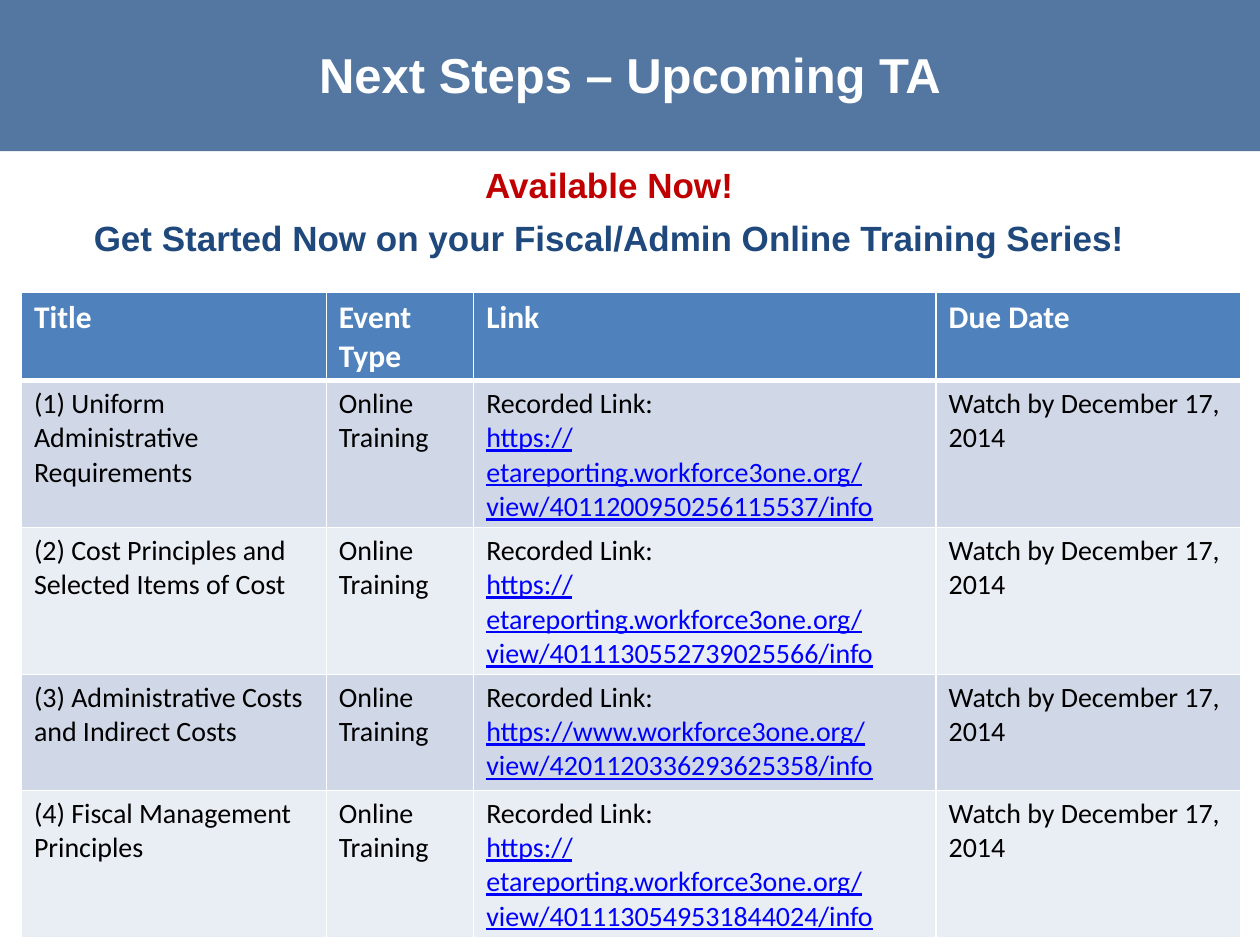
from dataclasses import dataclass

from lxml.etree import SubElement
from pptx import Presentation
from pptx.dml.color import RGBColor
from pptx.enum.shapes import MSO_SHAPE
from pptx.enum.text import MSO_ANCHOR, PP_ALIGN
from pptx.oxml.ns import qn
from pptx.util import Inches, Pt


@dataclass(frozen=True)
class Theme:
    heading_font: str = "Arial"
    table_font: str = "Calibri"
    title_size: int = 28
    intro_size: int = 20
    header_size: int = 18
    cell_size: int = 16
    banner: str = "376092"
    white: str = "FFFFFF"
    black: str = "000000"
    red: str = "C00000"
    navy: str = "1F497D"
    link: str = "0000FF"
    header_fill: str = "4F81BD"
    bands: tuple[str, str] = ("D0D8E8", "E9EDF4")


@dataclass(frozen=True)
class TextStyle:
    font: str
    size: int
    color: str
    bold: bool = False
    underline: bool = False


@dataclass(frozen=True)
class Training:
    title: str
    link: str
    event_type: str = "Online Training"
    due_date: str = "Watch by December 17, 2014"


THEME = Theme()
TITLE = TextStyle(THEME.heading_font, THEME.title_size, THEME.white, bold=True)
NOTICE = TextStyle(THEME.heading_font, THEME.intro_size, THEME.red, bold=True)
INVITATION = TextStyle(THEME.heading_font, THEME.intro_size, THEME.navy, bold=True)
HEADER = TextStyle(THEME.table_font, THEME.header_size, THEME.white, bold=True)
CELL = TextStyle(THEME.table_font, THEME.cell_size, THEME.black)
LINK = TextStyle(THEME.table_font, THEME.cell_size, THEME.link, underline=True)

HEADINGS = ("Title", "Event Type", "Link", "Due Date")
COLUMN_WIDTHS = (2.42, 1.17, 3.67, 2.42)
ROW_HEIGHTS = (0.7, 0.97, 0.92, 0.92, 1)
TRAININGS = (
    Training("(1) Uniform Administrative Requirements",
             "https://etareporting.workforce3one.org/view/4011200950256115537/info"),
    Training("(2) Cost Principles and Selected Items of Cost",
             "https://etareporting.workforce3one.org/view/4011130552739025566/info"),
    Training("(3) Administrative Costs and Indirect Costs",
             "https://www.workforce3one.org/view/4201120336293625358/info"),
    Training("(4) Fiscal Management Principles",
             "https://etareporting.workforce3one.org/view/4011130549531844024/info"),
)

Line = tuple[str, TextStyle]


def write_lines(text_frame, lines: list[Line], alignment=PP_ALIGN.LEFT,
                space_before: int = 0) -> None:
    """Write one paragraph per line, spacing all but the first."""
    for index, (text, style) in enumerate(lines):
        paragraph = text_frame.add_paragraph() if index else text_frame.paragraphs[0]
        paragraph.alignment = alignment
        if index:
            paragraph.space_before = Pt(space_before)
        run = paragraph.add_run()
        run.text = text
        run.font.name = style.font
        run.font.size = Pt(style.size)
        run.font.bold = style.bold
        run.font.underline = style.underline
        run.font.color.rgb = RGBColor.from_string(style.color)


def add_banner(slide) -> None:
    banner = slide.shapes.add_shape(
        MSO_SHAPE.RECTANGLE, Inches(-0.01), Inches(0), Inches(10.01), Inches(1.2))
    banner.shadow.inherit = False
    banner.line.fill.background()
    banner.fill.solid()
    banner.fill.fore_color.rgb = RGBColor.from_string(THEME.banner)
    color = banner.fill._xPr.find(f"{qn('a:solidFill')}/{qn('a:srgbClr')}")
    SubElement(color, qn("a:alpha"), val="85000")


def add_centered_text(slide, left: float, top: float, width: float, height: float,
                      lines: list[Line], anchor=MSO_ANCHOR.TOP) -> None:
    box = slide.shapes.add_textbox(
        Inches(left), Inches(top), Inches(width), Inches(height))
    box.text_frame.word_wrap = True
    box.text_frame.vertical_anchor = anchor
    write_lines(box.text_frame, lines, PP_ALIGN.CENTER, space_before=6)


def set_borders(cell, bottom_width: int) -> None:
    """Put white lines around a cell; they must precede its fill in the XML."""
    properties = cell._tc.get_or_add_tcPr()
    for side, width in (("L", 1), ("R", 1), ("T", 1), ("B", bottom_width)):
        border = SubElement(properties, qn(f"a:ln{side}"), w=str(Pt(width)))
        fill = SubElement(border, qn("a:solidFill"))
        SubElement(fill, qn("a:srgbClr"), val=THEME.white)


def fill_cell(cell, lines: list[Line], color: str, bottom_width: int = 1) -> None:
    set_borders(cell, bottom_width)
    cell.fill.solid()
    cell.fill.fore_color.rgb = RGBColor.from_string(color)
    write_lines(cell.text_frame, lines)


def add_training_table(slide) -> None:
    table = slide.shapes.add_table(
        len(ROW_HEIGHTS), len(COLUMN_WIDTHS), Inches(0.17), Inches(2.32),
        Inches(sum(COLUMN_WIDTHS)), Inches(sum(ROW_HEIGHTS))).table
    for column, width in zip(table.columns, COLUMN_WIDTHS):
        column.width = Inches(width)
    for row, height in zip(table.rows, ROW_HEIGHTS):
        row.height = Inches(height)

    for column, heading in enumerate(HEADINGS):
        fill_cell(table.cell(0, column), [(heading, HEADER)],
                  THEME.header_fill, bottom_width=3)
    for index, training in enumerate(TRAININGS):
        contents = (
            [(training.title, CELL)],
            [(training.event_type, CELL)],
            [("Recorded Link:", CELL), (training.link, LINK)],
            [(training.due_date, CELL)],
        )
        for column, lines in enumerate(contents):
            fill_cell(table.cell(index + 1, column), lines, THEME.bands[index % 2])


def main() -> None:
    presentation = Presentation()
    presentation.slide_width = Inches(10)
    presentation.slide_height = Inches(7.5)
    slide = presentation.slides.add_slide(presentation.slide_layouts[6])
    add_banner(slide)
    add_centered_text(slide, 0, 0, 10, 1.17,
                      [("Next Steps – Upcoming TA", TITLE)], MSO_ANCHOR.MIDDLE)
    add_centered_text(slide, 0.5, 1.25, 8.67, 5.45, [
        ("Available Now!", NOTICE),
        ("Get Started Now on your Fiscal/Admin Online Training Series!", INVITATION),
    ])
    add_training_table(slide)
    presentation.save("out.pptx")


if __name__ == "__main__":
    main()
